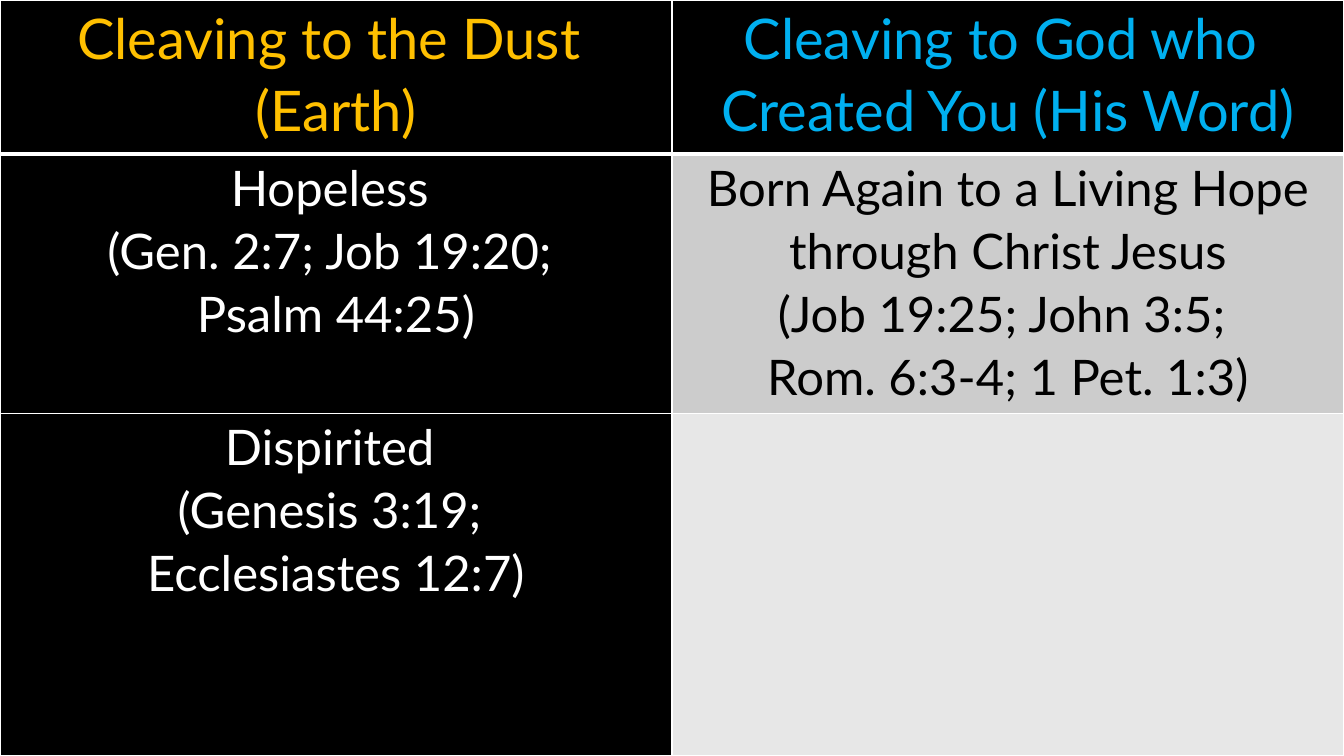
"""Build a slide with a two-column table that contrasts dust and God."""
from lxml import etree
from pptx import Presentation
from pptx import util as u
from pptx.dml.color import RGBColor
from pptx.enum import text
from pptx.oxml.ns import qn

THEME = dict(font="Lato", head=40, body=35, black="000000", white="FFFFFF",
             gold="FFC000", blue="00B0F0", gray="CCCCCC", pale="E7E7E7",
             thin=1, thick=3)


def write(cell, lines, size, color):
    """Fill a cell with centred lines."""
    frame = cell.text_frame
    frame.text = "\n".join(lines)
    for para in frame.paragraphs:
        para.alignment = text.PP_ALIGN.CENTER
        para.line_spacing = 1.07
        for run in para.runs:
            run.font.name = THEME["font"]
            run.font.size = u.Pt(THEME[size])
            run.font.bold = False
            run.font.color.rgb = RGBColor.from_string(THEME[color])


def edge(cell, side, width):
    """Draw one white border of a cell."""
    line = etree.SubElement(cell._tc.get_or_add_tcPr(), qn("a:ln" + side),
                            w=str(u.Pt(THEME[width])))
    fill = etree.SubElement(line, qn("a:solidFill"))
    etree.SubElement(fill, qn("a:srgbClr"), val=THEME["white"])


ROWS = [
    [(["Cleaving to the Dust ", "(Earth)"], "head", "gold", "black"),
     (["Cleaving to God who ", "Created You (His Word)"], "head", "blue", "black")],
    [(["Hopeless ", "(Gen. 2:7; Job 19:20; ", "Psalm 44:25)"],
      "body", "white", "black"),
     (["Born Again to a Living Hope through Christ Jesus",
       "(Job 19:25; John 3:5; ", "Rom. 6:3-4; 1 Pet. 1:3)"],
      "body", "black", "gray")],
    [(["Dispirited ", "(Genesis 3:19; ", "Ecclesiastes 12:7)"],
      "body", "white", "black"),
     ([], "body", "black", "pale")],
]
HEIGHTS = [1.53, 2.57, 3.4]

deck = Presentation()
deck.slide_width, deck.slide_height = u.Inches(13.33), u.Inches(7.5)
slide = deck.slides.add_slide(deck.slide_layouts[6])
slide.background.fill.solid()
slide.background.fill.fore_color.rgb = RGBColor.from_string(THEME["black"])

grid = slide.shapes.add_table(len(ROWS), len(ROWS[0]), 0, 0,
                              deck.slide_width, deck.slide_height).table
for row, height in zip(grid.rows, HEIGHTS):
    row.height = u.Inches(height)

for r, row in enumerate(ROWS):
    for c, (lines, size, color, back) in enumerate(row):
        cell = grid.cell(r, c)
        cell.margin_left = cell.margin_right = u.Inches(0.07)
        cell.margin_top = cell.margin_bottom = 0
        for side in "LRTB":
            rule = (r, side) in [(0, "B"), (1, "T")]
            edge(cell, side, "thick" if rule else "thin")
        cell.fill.solid()
        cell.fill.fore_color.rgb = RGBColor.from_string(THEME[back])
        write(cell, lines, size, color)

deck.save("out.pptx")
